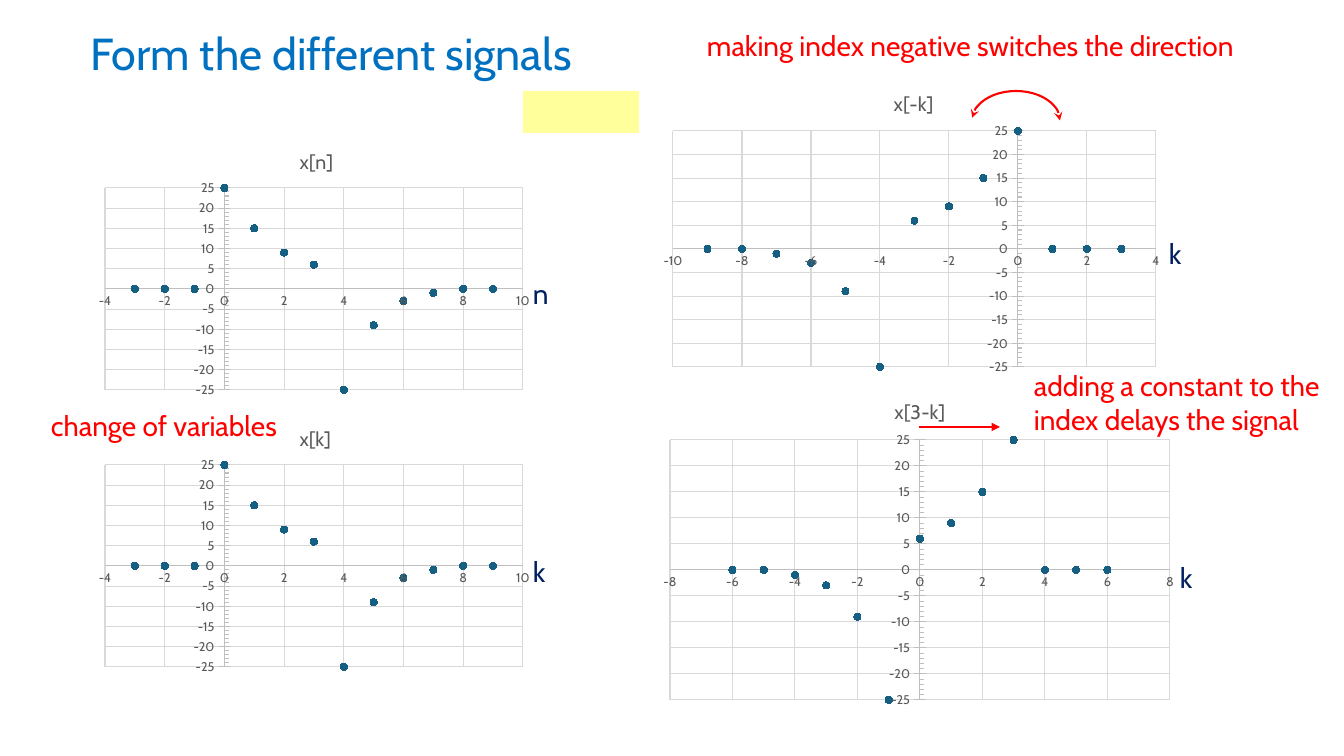
from pptx import Presentation
from pptx.chart.data import XyChartData
from pptx.dml.color import RGBColor
from pptx.enum.chart import XL_CHART_TYPE, XL_MARKER_STYLE, XL_TICK_MARK
from pptx.enum.shapes import MSO_CONNECTOR, MSO_SHAPE
from pptx.enum.text import MSO_ANCHOR, MSO_AUTO_SIZE, PP_ALIGN
from pptx.oxml import parse_xml
from pptx.oxml.ns import nsdecls, qn
from pptx.oxml.xmlchemy import OxmlElement
from pptx.util import Pt

EMU_PER_PX = 914400 / 100.8
COLORS = {
    "title": "0070C0", "note": "FF0000", "variable": "002060", "point": "156082",
    "axis_text": "595959", "axis": "BFBFBF", "grid": "D9D9D9", "highlight": "FFFF00",
}
SAMPLES = [0, 0, 0, 25, 15, 9, 6, -25, -9, -3, -1, 0, 0]
FIRST_INDEX = -3


def px(length):
    return round(length * EMU_PER_PX)


def rgb(name):
    return RGBColor.from_string(COLORS[name])


def style_font(font, size, color):
    font.name = "Cabin"
    font.size = Pt(size)
    font.bold = False
    font.color.rgb = rgb(color)


def write(frame, text, size=20, color="note"):
    paragraph = frame.paragraphs[0]
    paragraph.alignment = PP_ALIGN.LEFT
    run = paragraph.add_run()
    run.text = text
    style_font(run.font, size, color)


def style_line(line, color, width):
    line.color.rgb = rgb(color)
    line.width = Pt(width)


def set_layout(parent, position, fractions, inner=False):
    """Place a chart part by fractions of the chart: x, y and perhaps w, h."""
    for old in parent.findall(qn("c:layout")):
        parent.remove(old)
    target = '<c:layoutTarget val="inner"/>' if inner else ""
    modes = '<c:xMode val="edge"/><c:yMode val="edge"/>'
    sizes = "".join(f'<c:{key} val="{value:.4f}"/>' for key, value in zip("xywh", fractions))
    parent.insert(position, parse_xml(
        f'<c:layout {nsdecls("c")}><c:manualLayout>{target}{modes}{sizes}'
        "</c:manualLayout></c:layout>"))


class SignalSlide:
    """The current slide and the look shared by its elements."""

    def __init__(self, presentation):
        self.slide = presentation.slides.add_slide(presentation.slide_layouts[5])
        self.shapes = self.slide.shapes

    def title(self, text, box):
        title = self.shapes.title
        title.left, title.top, title.width, title.height = map(px, box)
        frame = title.text_frame
        frame.auto_size = MSO_AUTO_SIZE.NONE
        frame.vertical_anchor = MSO_ANCHOR.MIDDLE
        write(frame, text, size=32, color="title")

    def text(self, text, box, **style):
        frame = self.shapes.add_textbox(*map(px, box)).text_frame
        frame.word_wrap = True
        write(frame, text, **style)

    def signal(self, name, box, plot, name_left, index_range, index_of):
        """Chart the samples, with index_of mapping n to the shown index."""
        left, top, width, height = box
        data = XyChartData()
        series = data.add_series("Series 1")
        for n, sample in enumerate(SAMPLES, FIRST_INDEX):
            series.add_data_point(index_of(n), sample)
        chart = self.shapes.add_chart(XL_CHART_TYPE.XY_SCATTER, *map(px, box), data).chart
        chart.has_legend = False
        style_font(chart.font, 10, "axis_text")
        chart._chartSpace.chart.addnext(parse_xml(
            f'<c:spPr {nsdecls("c", "a")}><a:noFill/><a:ln><a:noFill/></a:ln></c:spPr>'))

        write(chart.chart_title.text_frame, name, size=14, color="axis_text")
        set_layout(chart.chart_title._element, 1, ((name_left - left) / width, 18 / height))
        set_layout(chart._chartSpace.chart.plotArea, 0, (
            (plot[0] - left) / width, (plot[1] - top) / height,
            plot[2] / width, plot[3] / height), inner=True)

        self.axis(chart.category_axis, index_range, 2)
        self.axis(chart.value_axis, (-25, 25), 5)
        chart.value_axis.major_tick_mark = XL_TICK_MARK.CROSS
        chart.value_axis.minor_tick_mark = XL_TICK_MARK.INSIDE
        chart.value_axis.minor_unit = 1

        chart.plots[0].vary_by_categories = False
        points = chart.plots[0].series[0]
        points.smooth = False
        points.format.line.fill.background()
        points.marker.style = XL_MARKER_STYLE.CIRCLE
        points.marker.size = 5
        points.marker.format.fill.solid()
        points.marker.format.fill.fore_color.rgb = rgb("point")
        style_line(points.marker.format.line, "point", 0.75)

    def axis(self, axis, limits, step):
        axis.minimum_scale, axis.maximum_scale = limits
        axis.major_unit = step
        axis.major_tick_mark = axis.minor_tick_mark = XL_TICK_MARK.NONE
        axis.has_major_gridlines = True
        style_line(axis.major_gridlines.format.line, "grid", 0.75)
        style_line(axis.format.line, "axis", 0.75)
        style_font(axis.tick_labels.font, 9, "axis_text")

    def arrowheads(self, shape, **ends):
        style_line(shape.line, "note", 1.5)
        outline = shape.line._get_or_add_ln()
        for end, kind in ends.items():
            head = OxmlElement(f"a:{end}")
            head.set("type", kind)
            outline.append(head)

    def flip_arc(self, box):
        arc = self.shapes.add_shape(MSO_SHAPE.ARC, *map(px, box))
        arc.adjustments[0] = 110.12
        arc.adjustments[1] = 0
        arc.fill.background()
        arc.shadow.inherit = False
        self.arrowheads(arc, headEnd="stealth", tailEnd="stealth")

    def arrow(self, start, end):
        arrow = self.shapes.add_connector(MSO_CONNECTOR.STRAIGHT, *map(px, start + end))
        self.arrowheads(arrow, tailEnd="triangle")
        arrow._element.spPr.append(OxmlElement("a:effectLst"))

    def highlight(self, box, opacity):
        marker = self.shapes.add_shape(MSO_SHAPE.RECTANGLE, *map(px, box))
        marker.shadow.inherit = False
        marker.line.fill.background()
        marker.fill.solid()
        marker.fill.fore_color.rgb = rgb("highlight")
        alpha = OxmlElement("a:alpha")
        alpha.set("val", str(opacity * 1000))
        marker._element.spPr.find(".//" + qn("a:srgbClr")).append(alpha)


def main():
    presentation = Presentation()
    presentation.slide_width = px(1344)
    presentation.slide_height = px(756)
    page = SignalSlide(presentation)

    page.title("Form the different signals", (80, 20, 574, 65))
    for name, top in (("x[k]", 404), ("x[n]", 127)):
        page.signal(name, (91, top, 449, 276), (105, top + 61, 418, 202), 296,
                    (-4, 10), lambda n: n)
    page.signal("x[-k]", (653, 69, 517, 312), (673, 131, 483, 236), 890,
                (-10, 4), lambda n: -n)
    page.signal("x[3-k]", (653, 377, 531, 339), (670, 440, 500, 260), 891,
                (-8, 8), lambda n: 3 - n)

    page.text("change of variables", (41, 404, 257, 44))
    page.text("making index negative switches the direction", (697, 24, 588, 44))
    page.text("adding a constant to the index delays the signal", (1024, 364, 322, 78))
    page.flip_arc((972, 91, 88, 59))
    page.arrow((919, 427), (1000, 427))
    page.highlight((523, 91, 116, 42), opacity=39)
    for variable, left, top in (("n", 523, 272), ("k", 523, 550),
                                ("k", 1159, 232), ("k", 1170, 556)):
        page.text(variable, (left, top, 45, 44), color="variable")

    presentation.save("out.pptx")


if __name__ == "__main__":
    main()
